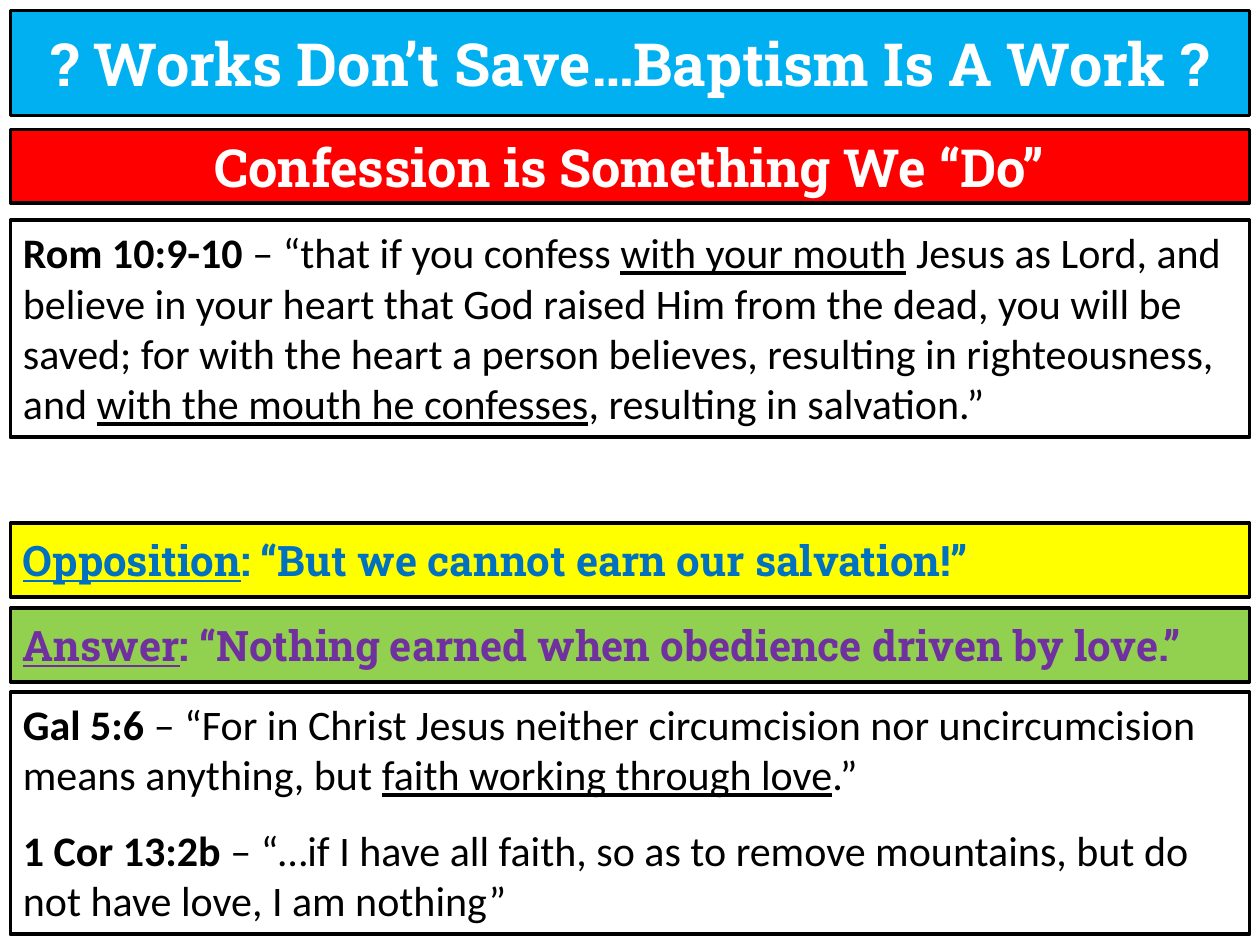
from pptx import Presentation
from pptx.dml.color import RGBColor
from pptx.enum.shapes import MSO_SHAPE
from pptx.enum.text import MSO_ANCHOR, PP_ALIGN
from pptx.util import Pt

RECT = MSO_SHAPE.RECTANGLE
TOP, MIDDLE = MSO_ANCHOR.TOP, MSO_ANCHOR.MIDDLE
LEFT, CENTER = PP_ALIGN.LEFT, PP_ALIGN.CENTER

SLAB, BODY = "Roboto Slab", "Calibri"
EDGE, WIDTH = 6, 708  # shared left edge and width of every box


def color(code):
    return RGBColor.from_string(code)


def add_box(slide, top, height, fill=None, anchor=MIDDLE):
    """Add a full-width outlined box and return its text frame."""
    box = slide.shapes.add_shape(RECT, Pt(EDGE), Pt(top), Pt(WIDTH), Pt(height))
    box.shadow.inherit = False
    if fill:
        box.fill.solid()
        box.fill.fore_color.rgb = color(fill)
    else:
        box.fill.background()
    box.line.color.rgb = color("000000")
    box.line.width = Pt(2.25)
    frame = box.text_frame
    frame.word_wrap = True
    frame.vertical_anchor = anchor
    return frame


def add_run(para, text, font, size, ink, bold=False, under=False):
    run = para.add_run()
    run.text = text
    run.font.name = font
    run.font.size = Pt(size)
    run.font.color.rgb = color(ink)
    run.font.bold = bold
    run.font.underline = under


def add_title(slide, top, height, fill, text, size):
    """Centred white heading on a coloured bar."""
    para = add_box(slide, top, height, fill).paragraphs[0]
    para.alignment = CENTER
    add_run(para, text, SLAB, size, "FFFFFF", bold=True)


def add_claim(slide, top, fill, ink, label, text):
    """Bar with an underlined label and a statement."""
    para = add_box(slide, top, 42, fill).paragraphs[0]
    para.alignment = LEFT
    add_run(para, label, SLAB, 24, ink, bold=True, under=True)
    add_run(para, text, SLAB, 24, ink, bold=True)


def add_verses(slide, top, height, verses):
    """Box of verses: a bold reference, then plain and underlined parts in turn."""
    frame = add_box(slide, top, height, anchor=TOP)
    for num, (ref, *parts) in enumerate(verses):
        para = frame.add_paragraph() if num else frame.paragraphs[0]
        para.alignment = LEFT
        para.space_before = Pt(14.5 if num else 0)
        add_run(para, ref, BODY, 24, "000000", bold=True)
        for spot, part in enumerate(parts):
            add_run(para, part, BODY, 24, "000000", under=spot % 2 == 1)


def main():
    deck = Presentation()
    deck.slide_width, deck.slide_height = Pt(720), Pt(540)
    slide = deck.slides.add_slide(deck.slide_layouts[6])

    # Headings
    add_title(slide, 6, 60, "00B0F0", "? Works Don’t Save…Baptism Is A Work ?", 34)
    add_title(slide, 74, 42, "FF0000", "Confession is Something We “Do”", 30)

    # Opening verse
    add_verses(slide, 126, 124, [
        ("Rom 10:9-10", " – “that if you confess ", "with your mouth",
         " Jesus as Lord, and believe in your heart that God raised Him from "
         "the dead, you will be saved; for with the heart a person believes, "
         "resulting in righteousness, and ",
         "with the mouth he confesses", ", resulting in salvation.”"),
    ])

    # Opposition and answer
    add_claim(slide, 299, "FFFF00", "0070C0", "Opposition",
              ": “But we cannot earn our salvation!”")
    add_claim(slide, 347.5, "92D050", "7030A0", "Answer",
              ": “Nothing earned when obedience driven by love.”")

    # Closing verses
    add_verses(slide, 395.5, 138.5, [
        ("Gal 5:6", " – “For in Christ Jesus neither circumcision nor "
         "uncircumcision means anything, but ",
         "faith working through love", ".”"),
        ("1 Cor 13:2b ", "– “…if I have all faith, so as to remove mountains, "
         "but do not have love, I am nothing”"),
    ])

    deck.save("out.pptx")


if __name__ == "__main__":
    main()
